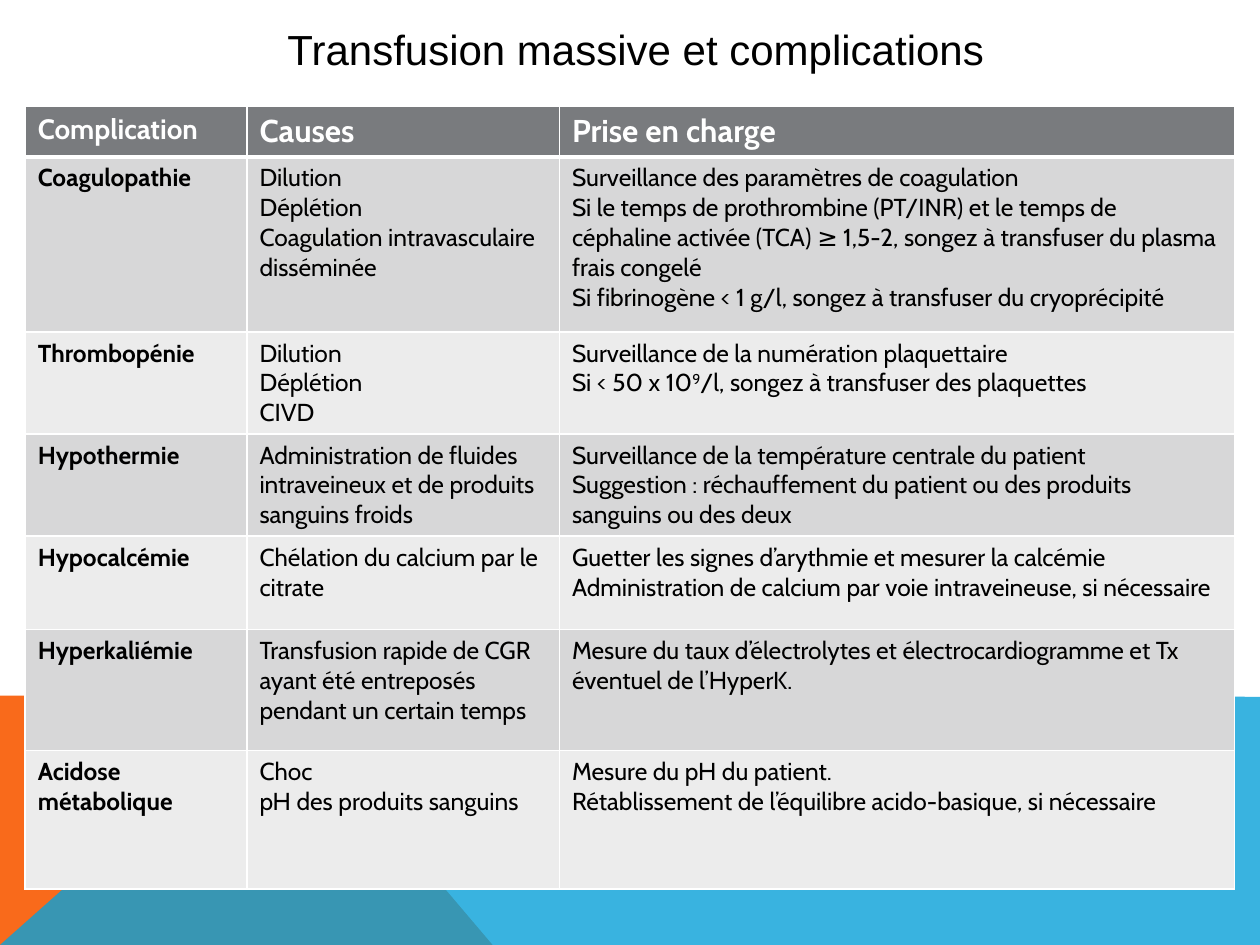
"""Build the slide on massive transfusion and its complications."""
from dataclasses import dataclass
from typing import Any

from lxml import etree
from pptx import Presentation
from pptx.dml.color import RGBColor
from pptx.enum import text
from pptx.oxml import ns
from pptx.util import Inches, Pt


@dataclass(frozen=True)
class Theme:
    """Colours, fonts and type sizes."""
    orange: str = "F96A1B"
    blue: str = "08A1D9"
    black: str = "000000"
    white: str = "FFFFFF"
    head: str = "797B7E"
    dark: str = "D7D7D8"
    light: str = "ECECEC"
    sans: str = "Arial"
    face: str = "Cabin"
    title: int = 24
    heads: tuple[int, ...] = (16, 18, 18)
    body: int = 14


@dataclass(frozen=True)
class Band:
    """A filled outline at the foot of the slide."""
    points: tuple[tuple[float, float], ...]
    fill: str
    alpha: int = 100


@dataclass(frozen=True)
class Row:
    """A table row; lines part paragraphs and carets enclose superscripts."""
    height: float
    cells: tuple[str, str, str]


THEME = Theme()
BANDS = (
    Band(((0, 7.5), (0, 5.52), (2.23, 5.52), (3.91, 7.5)), THEME.orange),
    Band(((0, 7.5), (2.23, 5.52), (10, 5.53), (10, 7.5)), THEME.blue, 80),
)
COLS = (1.76, 2.48, 5.36)
ROWS = (
    Row(0.4, ("Complication", "Causes", "Prise en charge")),
    Row(1.39, (
        "Coagulopathie",
        "Dilution\nDéplétion\nCoagulation intravasculaire disséminée",
        "Surveillance des paramètres de coagulation\n"
        "Si le temps de prothrombine (PT/INR) et le temps de céphaline activée "
        "(TCA) ≥ 1,5-2, songez à transfuser du plasma frais congelé\n"
        "Si fibrinogène < 1 g/l, songez à transfuser du cryoprécipité")),
    Row(0.74, (
        "Thrombopénie",
        "Dilution\nDéplétion\nCIVD",
        "Surveillance de la numération plaquettaire\n"
        "Si < 50 x 10^9^/l, songez à transfuser des plaquettes")),
    Row(0.74, (
        "Hypothermie",
        "Administration de fluides intraveineux et de produits sanguins froids",
        "Surveillance de la température centrale du patient\n"
        "Suggestion : réchauffement du patient ou des produits sanguins "
        "ou des deux")),
    Row(0.74, (
        "Hypocalcémie",
        "Chélation du calcium par le citrate",
        "Guetter les signes d’arythmie et mesurer la calcémie\n"
        "Administration de calcium par voie intraveineuse, si nécessaire")),
    Row(0.96, (
        "Hyperkaliémie",
        "Transfusion rapide de CGR ayant été entreposés pendant un certain temps",
        "Mesure du taux d’électrolytes et électrocardiogramme et Tx éventuel "
        "de l’HyperK.")),
    Row(1.1, (
        "Acidose métabolique",
        "Choc\npH des produits sanguins",
        "Mesure du pH du patient.\n"
        "Rétablissement de l’équilibre acido-basique, si nécessaire")),
)


def style(font: Any, color: str, **form: Any) -> None:
    """Apply format values and a colour to a font."""
    for key, value in form.items():
        setattr(font, key, value)
    font.color.rgb = RGBColor.from_string(color)


def draw_band(slide: Any, band: Band) -> None:
    """Draw one band with its transparency."""
    first, *rest = [(Inches(x), Inches(y)) for x, y in band.points]
    pen = slide.shapes.build_freeform(*first)
    pen.add_line_segments(rest)
    shape = pen.convert_to_shape()
    shape.shadow.inherit = False
    shape.line.fill.background()
    shape.fill.solid()
    shape.fill.fore_color.rgb = RGBColor.from_string(band.fill)
    if band.alpha < 100:
        tint = shape.element.spPr.find(".//" + ns.qn("a:srgbClr"))
        etree.SubElement(tint, ns.qn("a:alpha"), val=str(band.alpha * 1000))


def draw_title(slide: Any) -> None:
    """Place and format the slide title."""
    title = slide.shapes.title
    place = {"left": 0.2, "top": 0.13, "width": 9.69, "height": 0.51}
    for key, value in place.items():
        setattr(title, key, Inches(value))
    frame = title.text_frame
    frame.text = "Transfusion massive et complications"
    form = {"word_wrap": True, "auto_size": text.MSO_AUTO_SIZE.NONE,
            "vertical_anchor": text.MSO_ANCHOR.MIDDLE}
    for key, value in form.items():
        setattr(frame, key, value)
    para = frame.paragraphs[0]
    para.alignment = text.PP_ALIGN.CENTER
    style(para.runs[0].font, THEME.black, name=THEME.sans, size=Pt(THEME.title))


def edge(cell: Any, **widths: int) -> None:
    """Give a cell white borders of the given widths in points."""
    props = cell._tc.get_or_add_tcPr()
    for side, width in widths.items():
        line = etree.SubElement(props, ns.qn("a:ln" + side), w=str(Pt(width)))
        fill = etree.SubElement(line, ns.qn("a:solidFill"))
        etree.SubElement(fill, ns.qn("a:srgbClr"), val=THEME.white)


def write(cell: Any, words: str, color: str, **form: Any) -> None:
    """Write paragraphs into a cell, raising the parts between carets."""
    frame = cell.text_frame
    for i, line in enumerate(words.split("\n")):
        para = frame.add_paragraph() if i else frame.paragraphs[0]
        for j, part in enumerate(line.split("^")):
            run = para.add_run()
            run.text = part
            style(run.font, color, name=THEME.face, **form)
            if j % 2:
                run._r.get_or_add_rPr().set("baseline", "30000")


def draw_table(slide: Any) -> None:
    """Draw the table of complications."""
    frame = slide.shapes.add_table(
        len(ROWS), len(COLS), Inches(0.2), Inches(0.84),
        Inches(sum(COLS)), Inches(sum(row.height for row in ROWS)))
    table = frame.table
    for col, width in zip(table.columns, COLS):
        col.width = Inches(width)
    for i, row in enumerate(ROWS):
        table.rows[i].height = Inches(row.height)
        shade = (THEME.dark if i % 2 else THEME.light) if i else THEME.head
        ink = THEME.black if i else THEME.white
        for j, words in enumerate(row.cells):
            cell = table.cell(i, j)
            edge(cell, L=1, R=1, T=3 if i == 1 else 1, B=1 if i else 3)
            cell.fill.solid()
            cell.fill.fore_color.rgb = RGBColor.from_string(shade)
            size = THEME.body if i else THEME.heads[j]
            write(cell, words, ink, size=Pt(size), bold=i == 0 or j == 0)


def main() -> None:
    """Build and save the slide."""
    deck = Presentation()
    deck.slide_width, deck.slide_height = Inches(10), Inches(7.5)
    slide = deck.slides.add_slide(deck.slide_layouts[5])
    for band in BANDS:
        draw_band(slide, band)
    draw_title(slide)
    draw_table(slide)
    deck.save("out.pptx")


if __name__ == "__main__":
    main()
